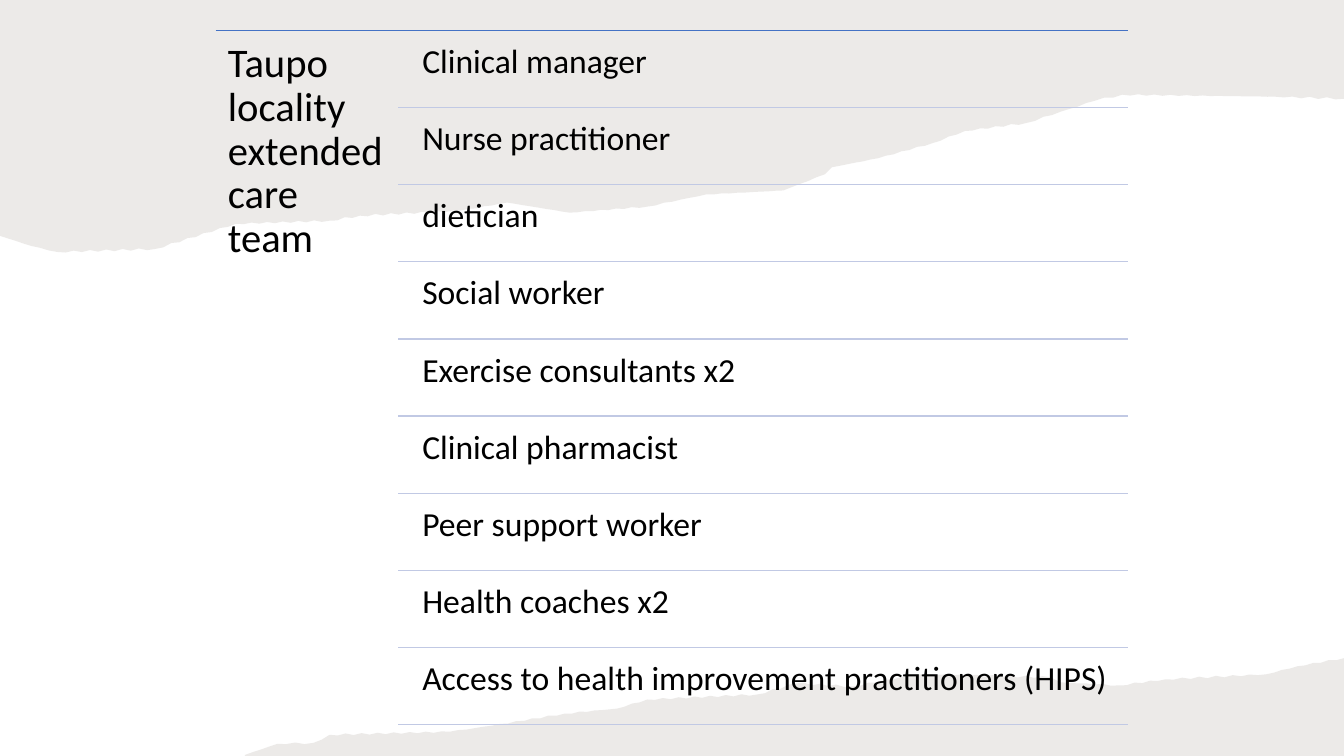
from itertools import pairwise
from math import sin

from lxml.etree import SubElement
from pptx import Presentation
from pptx.dml.color import RGBColor
from pptx.enum.shapes import MSO_CONNECTOR
from pptx.enum.text import MSO_ANCHOR, MSO_AUTO_SIZE, PP_ALIGN
from pptx.oxml.ns import qn
from pptx.util import Inches, Pt

TEAM = "Taupo locality extended care team"
ROLES = [
    "Clinical manager",
    "Nurse practitioner",
    "dietician",
    "Social worker",
    "Exercise consultants x2",
    "Clinical pharmacist",
    "Peer support worker",
    "Health coaches x2",
    "Access to health improvement practitioners (HIPS)",
]

WIDTH, HEIGHT = 13.33, 7.5
UPPER_EDGE = [
    (0, 2.34), (0.31, 2.44), (0.57, 2.5), (1.54, 2.47), (2.34, 2.22),
    (3.27, 2.19), (3.57, 2.14), (4.57, 2.09), (5.03, 2.01), (5.65, 2.11),
    (6.42, 2.05), (7, 1.93), (7.77, 1.89), (8.18, 1.73), (8.25, 1.66),
    (8.71, 1.57), (9.25, 1.42), (9.57, 1.3), (10.18, 1.22), (10.86, 1),
    (11.13, 0.94), (12.65, 0.96), (13.33, 0.98),
]
LOWER_EDGE = [
    (2.43, 7.49), (2.75, 7.38), (3.11, 7.37), (3.27, 7.29), (4.46, 7.26),
    (4.88, 7.2), (5.6, 7.08), (6.12, 7.03), (6.42, 6.94), (7.51, 6.89),
    (7.9, 6.78), (8.45, 6.81), (9.11, 6.69), (10.42, 6.72), (10.52, 6.77),
    (11.1, 6.8), (11.56, 6.74), (12.56, 6.69), (12.87, 6.61), (13.33, 6.53),
]
UPPER_CORNERS = [(WIDTH, 0), (0, 0)]
LOWER_CORNERS = [(WIDTH, HEIGHT), (2.43, HEIGHT)]

PAPER = RGBColor(0x82, 0x76, 0x6A)
BLUE = RGBColor(0x44, 0x72, 0xC4)
PALE = RGBColor(0xC1, 0xC9, 0xE4)
BLACK = RGBColor(0, 0, 0)

LEFT, SPLIT, RIGHT = 2.14, 3.95, 11.19
TOP, BASE = 0.3, 7.19
STEP = (BASE - TOP) / len(ROLES)
INDENT, GAP = 0.14, 0.04
PITCH, ROUGH = 0.08, 0.01


def fray(edge):
    """Return the edge with small uneven steps between its points."""
    points = [edge[0]]
    for (x1, y1), (x2, y2) in pairwise(edge):
        count = max(1, round((x2 - x1) / PITCH))
        for i in range(1, count):
            x = x1 + (x2 - x1) * i / count
            y = y1 + (y2 - y1) * i / count
            points.append((x, y + ROUGH * sin(40 * x)))
        points.append((x2, y2))
    return points


def tear(shapes, edge, corners):
    """Draw a faint paper sheet with one torn edge."""
    outline = [(Inches(x), Inches(y)) for x, y in fray(edge) + corners]
    pen = shapes.build_freeform(*outline[0])
    pen.add_line_segments(outline[1:])
    sheet = pen.convert_to_shape()
    sheet.shadow.inherit = False
    sheet.fill.solid()
    sheet.fill.fore_color.rgb = PAPER
    tint = sheet._element.spPr.find(qn("a:solidFill"))[0]
    SubElement(tint, qn("a:alpha"), val="15000")
    sheet.line.fill.background()


def rule(shapes, left, y, color):
    """Draw a level line from left to the right edge."""
    line = shapes.add_connector(
        MSO_CONNECTOR.STRAIGHT, Inches(left), Inches(y), Inches(RIGHT), Inches(y)
    )
    line.line.color.rgb = color
    line.line.width = Pt(1)
    SubElement(line._element.spPr, qn("a:effectLst"))


def write(box, text, size, inset):
    """Fill a box with top-left black text."""
    frame = box.text_frame
    frame.text = text
    frame.word_wrap = True
    frame.auto_size = MSO_AUTO_SIZE.NONE
    frame.vertical_anchor = MSO_ANCHOR.TOP
    frame.margin_left = frame.margin_right = Inches(inset)
    frame.margin_top = frame.margin_bottom = Inches(inset)
    para = frame.paragraphs[0]
    para.alignment = PP_ALIGN.LEFT
    para.line_spacing = 0.9
    font = para.runs[0].font
    font.name, font.size = "Calibri", Pt(size)
    font.color.rgb = BLACK


def head(shapes):
    """Place the team name beside the list, in front of the paper."""
    rule(shapes, LEFT, TOP, BLUE)
    title = shapes.title
    title.left, title.top = Inches(LEFT), Inches(TOP)
    title.width, title.height = Inches(SPLIT - LEFT), Inches(BASE - TOP)
    write(title, TEAM, 29, 0.12)
    shapes._spTree.append(title._element)


def enlist(shapes):
    """Stack the roles in equal rows, each with a line below."""
    left = SPLIT + INDENT
    for i, role in enumerate(ROLES):
        y = TOP + i * STEP
        box = shapes.add_textbox(
            Inches(left), Inches(y + GAP), Inches(RIGHT - left), Inches(STEP - GAP)
        )
        write(box, role, 24, 0.1)
        rule(shapes, SPLIT, y + STEP, PALE)


def main():
    """Build the care team slide."""
    deck = Presentation()
    deck.slide_width, deck.slide_height = Inches(WIDTH), Inches(HEIGHT)
    shapes = deck.slides.add_slide(deck.slide_layouts[5]).shapes
    tear(shapes, UPPER_EDGE, UPPER_CORNERS)
    tear(shapes, LOWER_EDGE, LOWER_CORNERS)
    head(shapes)
    enlist(shapes)
    deck.save("out.pptx")


if __name__ == "__main__":
    main()
